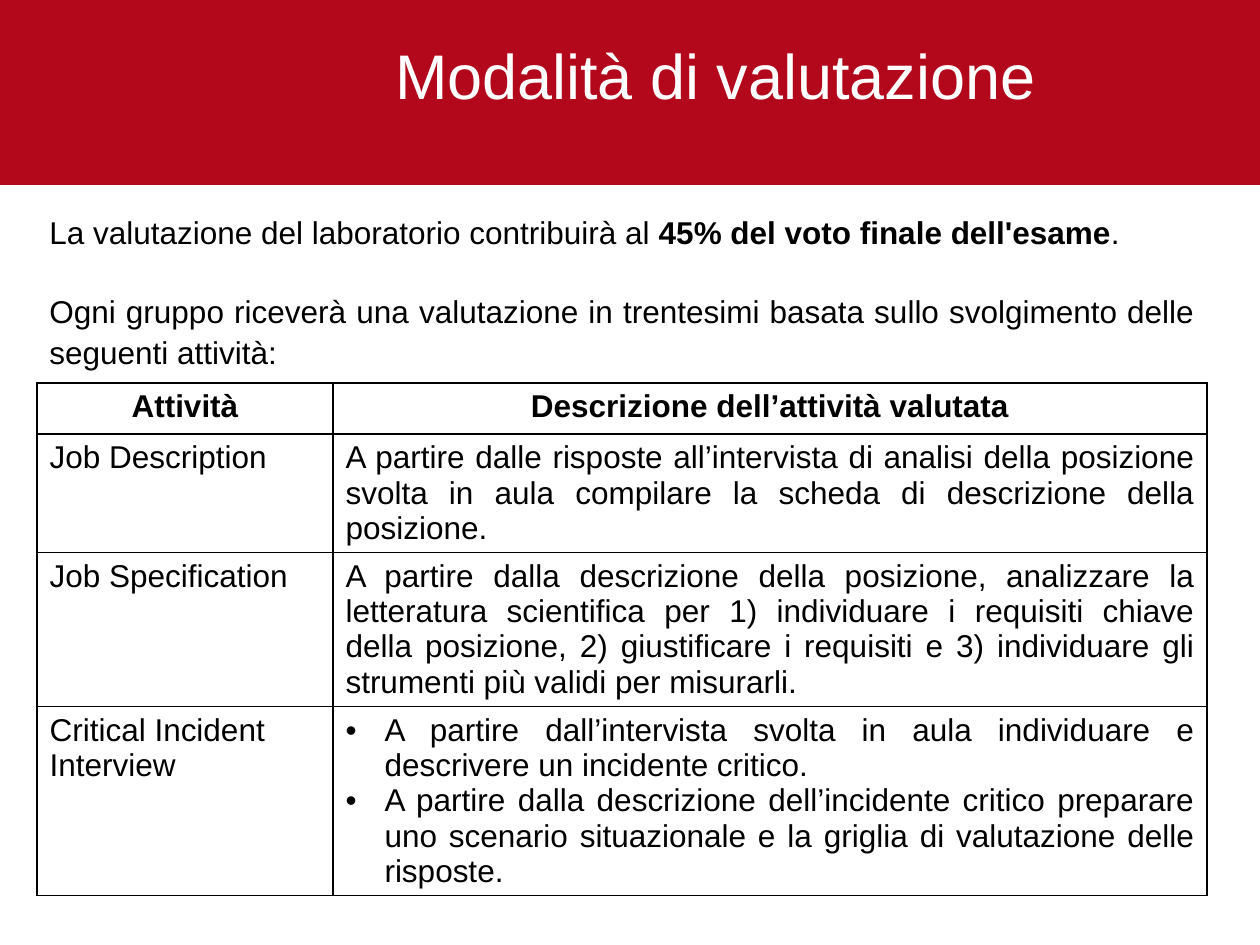
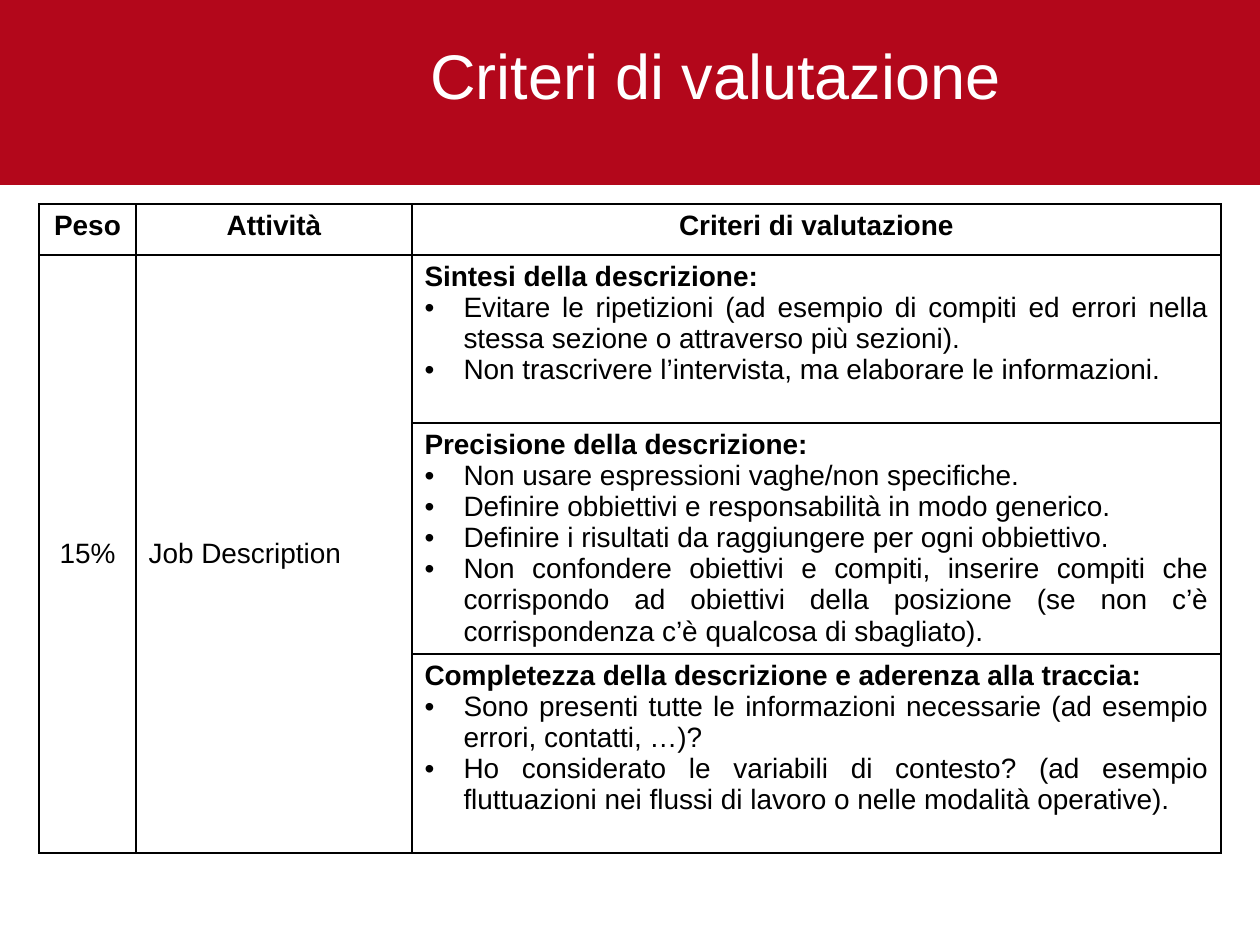
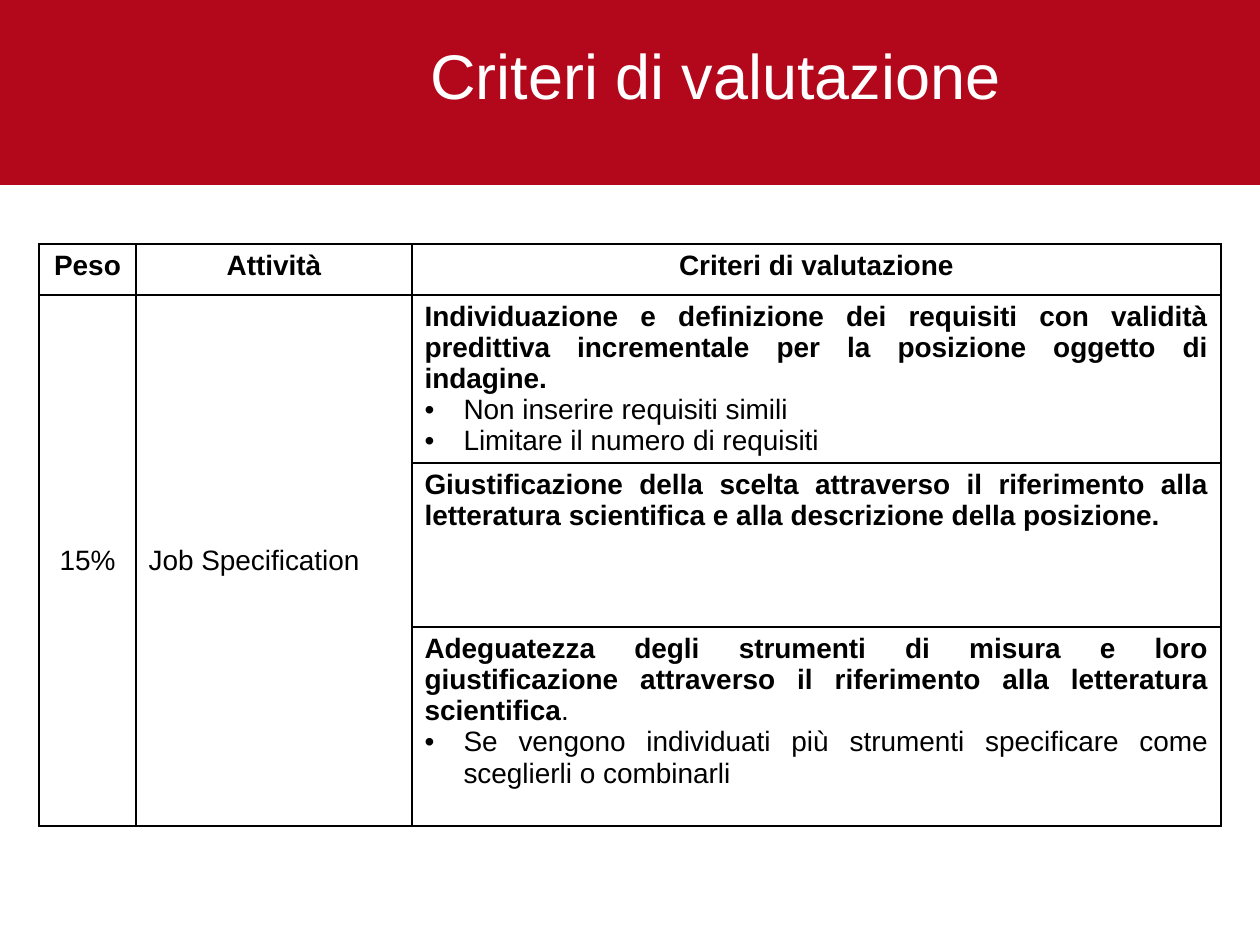
from dataclasses import dataclass

from pptx import Presentation
from pptx.dml.color import RGBColor
from pptx.enum.shapes import MSO_SHAPE
from pptx.enum.text import MSO_ANCHOR as Anchor, PP_ALIGN as Align
from pptx.oxml import parse_xml
from pptx.oxml.ns import nsdecls
from pptx.util import Pt

EMU_PER_PX = 914400 / 126
SLIDE_WIDTH, SLIDE_HEIGHT = 1260, 945
TITLE_ONLY = 5
BAND_ID = 20
BULLET = "• "
BOLD = "**"


@dataclass(frozen=True)
class Theme:
    font: str = "Arial"
    band: str = "B3071B"
    on_band: str = "FFFFFF"
    text: str = "000000"
    paper: str = "FFFFFF"
    title_size: int = 36
    body_size: int = 18
    criteria_size: int = 16
    indent: int = 39
    border: int = 1


def px(length):
    return round(length * EMU_PER_PX)


def frame_of(left, top, width, height):
    return px(left), px(top), px(width), px(height)


class Builder:
    """Holds the deck, its theme and the slide being filled."""

    def __init__(self, theme):
        self.theme = theme
        self.deck = Presentation()
        self.deck.slide_width = px(SLIDE_WIDTH)
        self.deck.slide_height = px(SLIDE_HEIGHT)
        self.layout = self.deck.slide_layouts[TITLE_ONLY]
        self.slide = None

    def start_slide(self, title):
        first = self.slide is None
        self.slide = self.deck.slides.add_slide(self.layout)
        if first:
            self.add_band_to_layout()
        self.add_title(title)

    def add_band_to_layout(self):
        """Draw the band once and move it to the back of the shared layout."""
        band = self.slide.shapes.add_shape(
            MSO_SHAPE.RECTANGLE, *frame_of(0, -4, SLIDE_WIDTH + 1, 189))
        band.shadow.inherit = False
        band.fill.solid()
        band.fill.fore_color.rgb = RGBColor.from_string(self.theme.band)
        band.line.fill.background()
        band.element.nvSpPr.cNvPr.id = BAND_ID
        self.layout.shapes.element.insert(2, band.element)

    def add_title(self, text):
        title = self.slide.shapes.title
        title.left, title.top, title.width, title.height = frame_of(263, 0, 905, 149)
        frame = title.text_frame
        frame.text = text
        frame.vertical_anchor = Anchor.MIDDLE
        frame.margin_left = frame.margin_right = px(6)
        frame.margin_top = frame.margin_bottom = px(6)
        para = frame.paragraphs[0]
        para.alignment = Align.CENTER
        self.style_font(para.runs[0].font, self.theme.title_size, self.theme.on_band)

    def style_font(self, font, size, color, bold=False):
        font.name = self.theme.font
        font.size = Pt(size)
        font.bold = bold
        font.color.rgb = RGBColor.from_string(color)

    def fill_text(self, frame, lines, size, align):
        """Fill a frame; ** toggles bold and a leading bullet makes a list item."""
        for index, line in enumerate(lines):
            para = frame.add_paragraph() if index else frame.paragraphs[0]
            para.alignment = align
            if line.startswith(BULLET):
                self.add_bullet(para)
                line = line.removeprefix(BULLET)
            for part, text in enumerate(line.split(BOLD)):
                if text:
                    span = para.add_run()
                    span.text = text
                    self.style_font(span.font, size, self.theme.text, part % 2 == 1)

    def add_bullet(self, para):
        properties = para._p.get_or_add_pPr()
        indent = px(self.theme.indent)
        properties.set("marL", str(indent))
        properties.set("indent", str(-indent))
        for xml in (f'<a:buFont {nsdecls("a")} typeface="{self.theme.font}"/>',
                    f'<a:buChar {nsdecls("a")} char="{BULLET.strip()}"/>'):
            properties.append(parse_xml(xml))

    def add_text(self, place, lines, line_spacing, gap):
        box = self.slide.shapes.add_textbox(*frame_of(*place))
        box.text_frame.word_wrap = True
        self.fill_text(box.text_frame, lines, self.theme.body_size, Align.JUSTIFY)
        for index, para in enumerate(box.text_frame.paragraphs):
            para.line_spacing = line_spacing
            if index:
                para.space_before = Pt(gap)

    def add_table(self, left, top, widths, heights):
        place = frame_of(left, top, sum(widths), sum(heights))
        table = self.slide.shapes.add_table(len(heights), len(widths), *place).table
        table.first_row = table.horz_banding = False
        for column, width in zip(table.columns, widths):
            column.width = px(width)
        for row, height in zip(table.rows, heights):
            row.height = px(height)
        for cell in table.iter_cells():
            self.style_cell(cell)
        return table

    def style_cell(self, cell):
        properties = cell._tc.get_or_add_tcPr()
        for side in "LRTB":
            properties.append(parse_xml(
                f'<a:ln{side} {nsdecls("a")} w="{Pt(self.theme.border)}"><a:solidFill>'
                f'<a:srgbClr val="{self.theme.text}"/></a:solidFill></a:ln{side}>'))
        cell.fill.solid()
        cell.fill.fore_color.rgb = RGBColor.from_string(self.theme.paper)

    def fill_header(self, table, labels, size):
        for column, label in enumerate(labels):
            self.fill_text(table.cell(0, column).text_frame,
                           [BOLD + label + BOLD], size, Align.CENTER)

    def add_activities(self, top, heights, activities):
        size = self.theme.body_size
        table = self.add_table(37, top, (296, 874), heights)
        self.fill_header(table, ("Attività", "Descrizione dell’attività valutata"), size)
        for row, (name, lines) in enumerate(activities, start=1):
            self.fill_text(table.cell(row, 0).text_frame, [name], size, Align.LEFT)
            self.fill_text(table.cell(row, 1).text_frame, lines, size, Align.JUSTIFY)

    def add_criteria(self, top, heights, weight, activity, criteria):
        """Table with one weight and one activity spanning all its criteria."""
        size = self.theme.criteria_size
        table = self.add_table(39, top, (97, 276, 809), heights)
        self.fill_header(table, ("Peso", "Attività", "Criteri di valutazione"), size)
        for column, text, align in ((0, weight, Align.CENTER), (1, activity, Align.LEFT)):
            cell = table.cell(1, column)
            cell.merge(table.cell(len(criteria), column))
            cell.vertical_anchor = Anchor.MIDDLE
            self.fill_text(cell.text_frame, [text], size, align)
        for row, lines in enumerate(criteria, start=1):
            self.fill_text(table.cell(row, 2).text_frame, lines, size, Align.JUSTIFY)


INTRODUCTION = (
    "La valutazione del laboratorio contribuirà al **45% del voto finale dell'esame**.",
    "Ogni gruppo riceverà una valutazione in trentesimi basata sullo svolgimento delle "
    "seguenti attività:",
)

ACTIVITIES = (
    ("Job Description", (
        "A partire dalle risposte all’intervista di analisi della posizione svolta in aula "
        "compilare la scheda di descrizione della posizione.",
    )),
    ("Job Specification", (
        "A partire dalla descrizione della posizione, analizzare la letteratura scientifica "
        "per 1) individuare i requisiti chiave della posizione, 2) giustificare i requisiti "
        "e 3) individuare gli strumenti più validi per misurarli.",
    )),
    ("Critical Incident Interview", (
        "• A partire dall’intervista svolta in aula individuare e descrivere un incidente "
        "critico.",
        "• A partire dalla descrizione dell’incidente critico preparare uno scenario "
        "situazionale e la griglia di valutazione delle risposte.",
    )),
)

DESCRIPTION_CRITERIA = (
    ("**Sintesi della descrizione:**",
     "• Evitare le ripetizioni (ad esempio di compiti ed errori nella stessa sezione o "
     "attraverso più sezioni).",
     "• Non trascrivere l’intervista, ma elaborare le informazioni."),
    ("**Precisione della descrizione:**",
     "• Non usare espressioni vaghe/non specifiche.",
     "• Definire obbiettivi e responsabilità in modo generico.",
     "• Definire i risultati da raggiungere per ogni obbiettivo.",
     "• Non confondere obiettivi e compiti, inserire compiti che corrispondo ad obiettivi "
     "della posizione (se non c’è corrispondenza c’è qualcosa di sbagliato)."),
    ("**Completezza della descrizione e aderenza alla traccia:**",
     "• Sono presenti tutte le informazioni necessarie (ad esempio errori, contatti, …)?",
     "• Ho considerato le variabili di contesto? (ad esempio fluttuazioni nei flussi di "
     "lavoro o nelle modalità operative)."),
)

SPECIFICATION_CRITERIA = (
    ("**Individuazione e definizione dei requisiti con validità predittiva incrementale "
     "per la posizione oggetto di indagine.**",
     "• Non inserire requisiti simili",
     "• Limitare il numero di requisiti"),
    ("**Giustificazione della scelta attraverso il riferimento alla letteratura "
     "scientifica e alla descrizione della posizione.**",),
    ("**Adeguatezza degli strumenti di misura e loro giustificazione attraverso il "
     "riferimento alla letteratura scientifica**.",
     "• Se vengono individuati più strumenti specificare come sceglierli o combinarli"),
)


def main():
    builder = Builder(Theme())

    builder.start_slide("Modalità di valutazione")
    builder.add_activities(383, (51, 118, 154, 189), ACTIVITIES)
    builder.add_text((37, 204, 1170, 165), INTRODUCTION, line_spacing=1.08, gap=22)

    builder.start_slide("Criteri di valutazione")
    builder.add_criteria(204, (51, 168, 231, 199), "15%", "Job Description",
                         DESCRIPTION_CRITERIA)

    builder.start_slide("Criteri di valutazione")
    builder.add_criteria(244, (51, 168, 164, 199), "15%", "Job Specification",
                         SPECIFICATION_CRITERIA)

    builder.deck.save("out.pptx")


if __name__ == "__main__":
    main()
